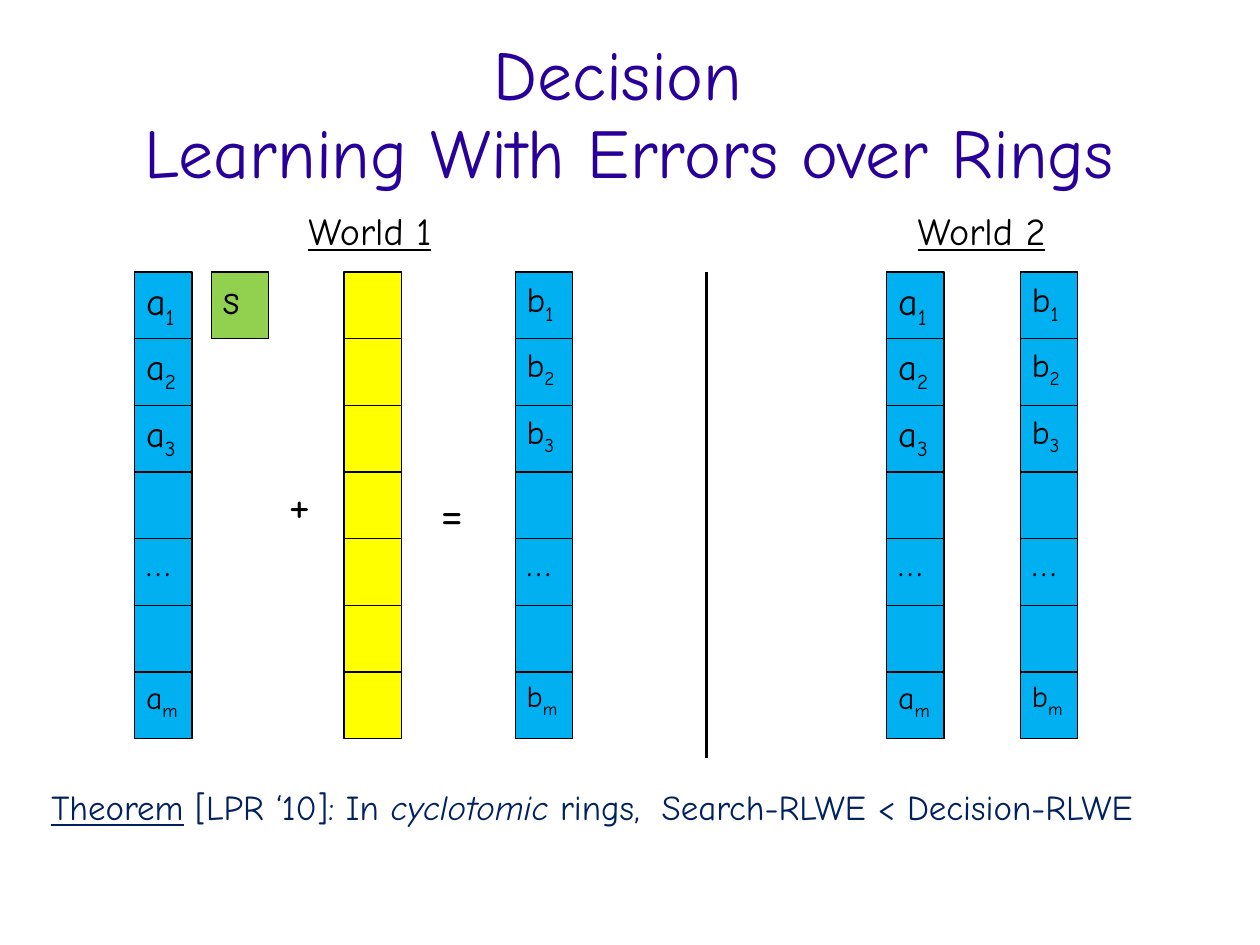
from pptx import Presentation
from pptx.dml.color import RGBColor
from pptx.enum.shapes import MSO_CONNECTOR, MSO_SHAPE
from pptx.enum.text import MSO_ANCHOR, PP_ALIGN
from pptx.oxml.ns import qn
from pptx.util import Cm, Inches, Pt
from lxml import etree

RECT = MSO_SHAPE.RECTANGLE
LINE = MSO_CONNECTOR.STRAIGHT
MIDDLE, TOP = MSO_ANCHOR.MIDDLE, MSO_ANCHOR.TOP
CENTER, LEFT = PP_ALIGN.CENTER, PP_ALIGN.LEFT

BLACK = RGBColor(0x00, 0x00, 0x00)
VIOLET = RGBColor(0x28, 0x00, 0x99)
NAVY = RGBColor(0x00, 0x20, 0x60)
BLUE = RGBColor(0x00, 0xB0, 0xF0)
GREEN = RGBColor(0x92, 0xD0, 0x50)
YELLOW = RGBColor(0xFF, 0xFF, 0x00)
FONT = "Comic Neue"

TITLE = ("Decision ", "Learning With Errors over Rings")
THEOREM = [("Theorem", "under"), (" [LPR ‘10]: In ", ""), ("cyclotomic", "italic"),
           (" rings,\tSearch-RLWE < Decision-RLWE", "")]
CLAIM_TAB = 5.34
WORLDS = [("World 1", 2.6), ("World 2", 7.93)]
SIGNS = [("+", 2.43, 4.13), ("=", 3.76, 4.2)]

ROWS = 7
A_CELLS = {0: ("a", "1", 24), 1: ("a", "2", 23), 2: ("a", "3", 23),
           4: ("…", "", 23), 6: ("a", "m", 20)}
B_CELLS = {0: ("b", "1", 22), 1: ("b", "2", 21), 2: ("b", "3", 21),
           4: ("…", "", 23), 6: ("b", "m", 19)}
COLUMNS = [(1.18, BLUE, A_CELLS), (3.01, YELLOW, {}), (4.51, BLUE, B_CELLS),
           (7.76, BLUE, A_CELLS), (8.93, BLUE, B_CELLS)]
CELL_TOP, CELL_WIDTH, STEP = 2.38, 0.5, 3.5 / 6


def write(frame, runs, size, color=BLACK, align=LEFT, anchor=TOP, tab=None):
    frame.word_wrap = True
    frame.vertical_anchor = anchor
    para = frame.paragraphs[0]
    para.alignment = align
    para.line_spacing = 0.93
    if tab:
        tabs = etree.SubElement(para._p.get_or_add_pPr(), qn("a:tabLst"))
        etree.SubElement(tabs, qn("a:tab"), pos=str(Inches(tab)), algn="l")
    para.font.name, para.font.size = FONT, Pt(size)
    para.font.color.rgb = color
    for text, style in runs:
        if style == "break":
            para.add_line_break()
        run = para.add_run()
        run.text = text
        if style == "under":
            run.font.underline = True
        elif style == "italic":
            run.font.italic = True
        elif style == "sub":
            run._r.get_or_add_rPr().set("baseline", "-25000")


def label(slide, box, runs, size, **look):
    frame = slide.shapes.add_textbox(*map(Inches, box)).text_frame
    write(frame, runs, size, **look)
    return frame


def cell(slide, left, row, fill, text=None):
    box = (left, CELL_TOP + row * STEP, CELL_WIDTH, STEP)
    shape = slide.shapes.add_shape(RECT, *map(Inches, box))
    shape.shadow.inherit = False
    shape.fill.solid()
    shape.fill.fore_color.rgb = fill
    shape.line.color.rgb = BLACK
    shape.line.width = Pt(0.75)
    if text:
        base, sub, size = text
        runs = [(base, "")] + ([(sub, "sub")] if sub else [])
        write(shape.text_frame, runs, size)


def main():
    deck = Presentation()
    deck.slide_width, deck.slide_height = Cm(28), Cm(21)
    slide = deck.slides.add_slide(deck.slide_layouts[6])

    head, tail = TITLE
    title = label(slide, (0.55, 0.33, 9.92, 1.38), [(head, ""), (tail, "break")],
                  44, color=VIOLET, align=CENTER, anchor=MIDDLE)
    title.margin_left = title.margin_right = 0
    title.margin_top = title.margin_bottom = 0

    for left, fill, texts in COLUMNS:
        for row in range(ROWS):
            cell(slide, left, row, fill, texts.get(row))
    cell(slide, 1.85, 0, GREEN, ("s", "", 26))

    for sign, left, top in SIGNS:
        label(slide, (left, top, 0.42, 0.6), [(sign, "")], 32)

    rule = slide.shapes.add_connector(
        LINE, *map(Inches, (6.18, CELL_TOP, 6.18, 6.63)))
    rule.line.color.rgb = BLACK
    rule.line.width = Pt(2)
    etree.SubElement(rule._element.spPr, qn("a:effectLst"))

    label(slide, (0.35, 6.86, 10.58, 0.45), THEOREM, 22, color=NAVY, tab=CLAIM_TAB)
    for name, left in WORLDS:
        label(slide, (left, 1.8, 1.5, 0.48), [(name, "under")], 24)

    deck.save("out.pptx")


if __name__ == "__main__":
    main()
